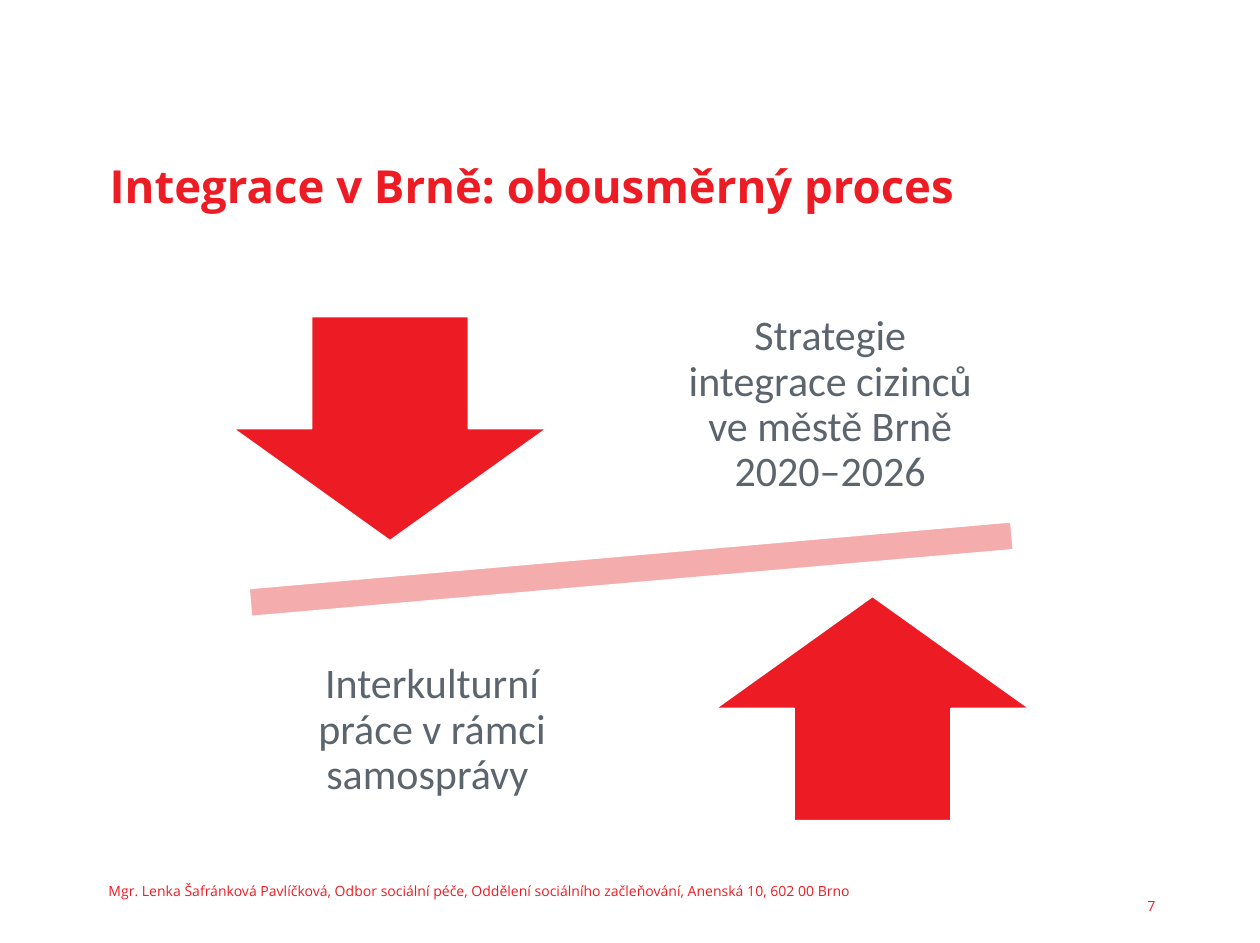
import dataclasses

import pptx
import pptx.dml.color
import pptx.enum.shapes
import pptx.enum.text
import pptx.util

Inches = pptx.util.Inches
Shape = pptx.enum.shapes.MSO_SHAPE
Align = pptx.enum.text.PP_ALIGN
Anchor = pptx.enum.text.MSO_ANCHOR


@dataclasses.dataclass(frozen=True)
class Theme:
    red: str = "ED1C24"
    pink: str = "F4ACAC"
    grey: str = "5C646D"
    white: str = "FFFFFF"
    brand_font: str = "Open Sans"
    label_font: str = "Calibri"
    title_size: int = 26
    label_size: int = 24
    small_size: int = 8


THEME = Theme()


def color(value):
    return pptx.dml.color.RGBColor.from_string(value)


def place(item, left, top, width, height):
    item.left, item.top = Inches(left), Inches(top)
    item.width, item.height = Inches(width), Inches(height)


def write(box, text, *, size, fill=THEME.red, font=THEME.brand_font, bold=False,
          align=Align.LEFT, anchor=Anchor.BOTTOM, inset=0, spacing=1.0):
    frame = box.text_frame
    frame.word_wrap = True
    frame.auto_size = pptx.enum.text.MSO_AUTO_SIZE.NONE
    frame.vertical_anchor = anchor
    frame.margin_left = frame.margin_right = Inches(inset)
    frame.margin_top = frame.margin_bottom = Inches(inset)
    para = frame.paragraphs[0]
    para.alignment = align
    para.line_spacing = spacing
    para.space_before = pptx.util.Pt(0)
    span = para.add_run()
    span.text = text
    span.font.name = font
    span.font.size = pptx.util.Pt(size)
    span.font.bold = bold
    span.font.color.rgb = color(fill)


def add_text(page, text, bounds, **options):
    box = page.shapes.add_textbox(*map(Inches, bounds))
    write(box, text, **options)


def add_label(page, text, left, top):
    add_text(page, text, (left, top, 2.66, 1.87), size=THEME.label_size,
             fill=THEME.grey, font=THEME.label_font, align=Align.CENTER,
             anchor=Anchor.MIDDLE, inset=0.19, spacing=0.9)


def add_figure(page, kind, bounds, fill, rotation=0):
    figure = page.shapes.add_shape(kind, *map(Inches, bounds))
    figure.shadow.inherit = False
    figure.fill.solid()
    figure.fill.fore_color.rgb = color(fill)
    figure.line.color.rgb = color(THEME.white)
    figure.line.width = pptx.util.Pt(1)
    figure.rotation = rotation


def add_arrow(page, kind, left, top):
    add_figure(page, kind, (left, top, 2.49, 1.78), THEME.red)


def add_title(page, text):
    title = page.shapes.title
    place(title, 0.87, 0.54, 8.31, 1.15)
    write(title, text, size=THEME.title_size, bold=True)


def main():
    deck = pptx.Presentation()
    deck.slide_width = Inches(10)
    deck.slide_height = pptx.util.Cm(19)
    page = deck.slides.add_slide(deck.slide_layouts.get_by_name("Title Only"))

    add_title(page, "Integrace v Brně: obousměrný proces")
    add_figure(page, Shape.MATH_MINUS, (0.88, 4.04, 8.26, 0.95), THEME.pink, rotation=355)
    add_arrow(page, Shape.DOWN_ARROW, 1.85, 2.51)
    add_label(page, "Strategie integrace cizinců ve městě Brně 2020–2026", 5.26, 2.28)
    add_arrow(page, Shape.UP_ARROW, 5.68, 4.73)
    add_label(page, "Interkulturní práce v rámci samosprávy ", 2.1, 4.86)
    add_text(page, "Mgr. Lenka Šafránková Pavlíčková, Odbor sociální péče, "
             "Oddělení sociálního začleňování, Anenská 10, 602 00 Brno",
             (0.86, 6.85, 5.9, 0.28), size=THEME.small_size, align=Align.CENTER)
    add_text(page, "7", (8.61, 6.85, 0.56, 0.4), size=THEME.small_size, align=Align.RIGHT)

    deck.save("out.pptx")


if __name__ == "__main__":
    main()
